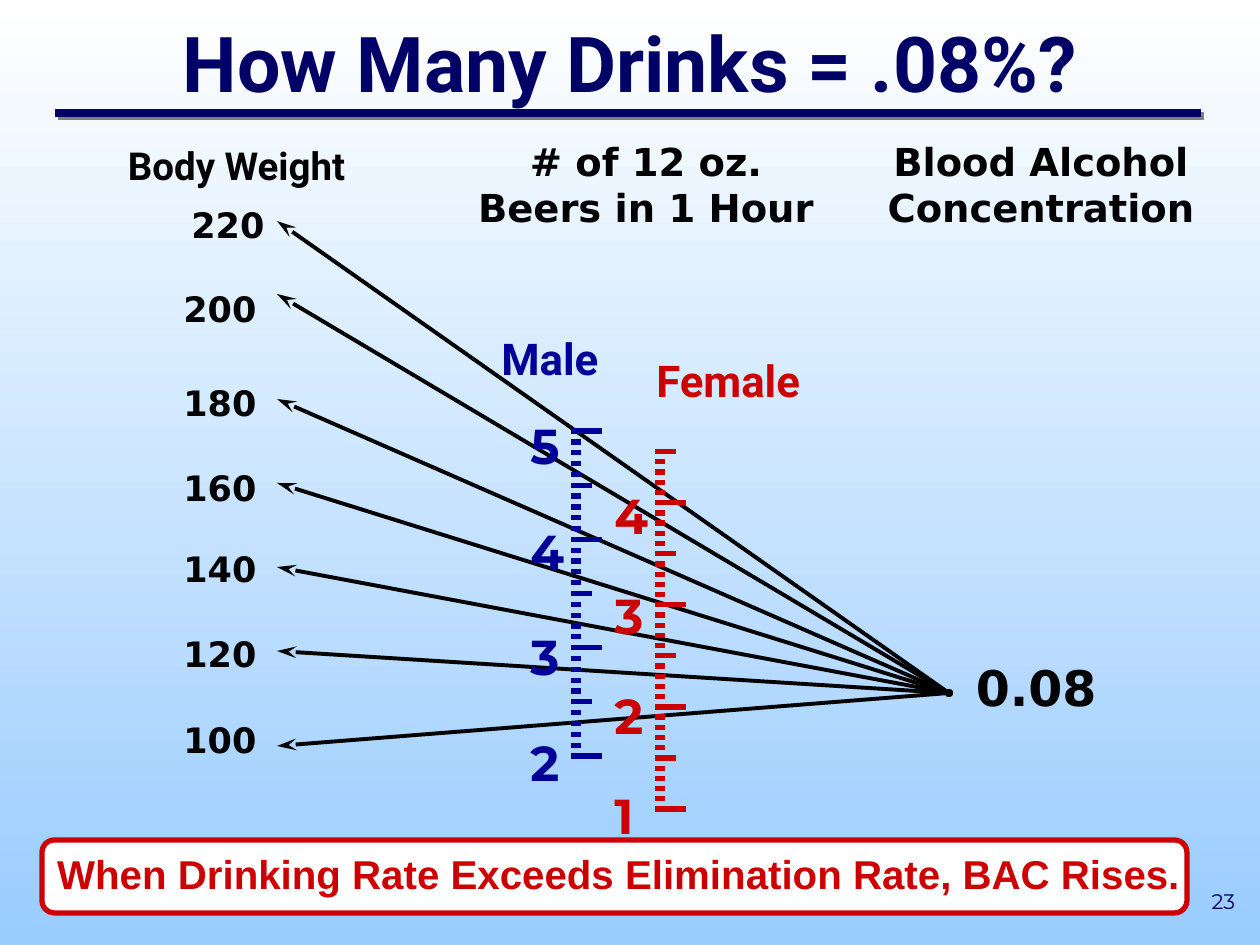
from pptx import Presentation
from pptx.dml.color import RGBColor
from pptx.enum.shapes import MSO_CONNECTOR as Link, MSO_SHAPE as Form
from pptx.enum.text import MSO_ANCHOR as Anchor, PP_ALIGN as Align
from pptx.oxml import parse_xml
from pptx.oxml.ns import nsdecls, qn
from pptx.util import Pt

SCALE = 914400 / 126
NAVY, BLUE, RED, BLACK, WHITE = "000066", "000099", "CC0000", "000000", "FFFFFF"
SANS = "DejaVu Sans"
SHADE = (
    '<a:outerShdw dist="35921" dir="2700000" algn="ctr" rotWithShape="0">'
    '<a:srgbClr val="808080"/></a:outerShdw>'
)


def px(num):
    return round(num * SCALE)


def tint(code):
    return RGBColor.from_string(code)


def effect(inner=""):
    return parse_xml(f'<a:effectLst {nsdecls("a")}>{inner}</a:effectLst>')


def place(shape, box):
    shape.left, shape.top, shape.width, shape.height = map(px, box)


def add_run(para, text, size, font, color, bold=True):
    run = para.add_run()
    run.text = text
    run.font.size = Pt(size)
    run.font.name = font
    run.font.bold = bold
    run.font.color.rgb = tint(color)
    return run


def add_text(slide, box, lines, size, font, color, align=Align.LEFT, gaps=None, bold=True):
    frame = slide.shapes.add_textbox(*map(px, box)).text_frame
    frame.word_wrap = True
    for i, text in enumerate(lines):
        para = frame.paragraphs[0] if i == 0 else frame.add_paragraph()
        para.alignment = align
        if gaps:
            para.line_spacing = gaps[i]
        add_run(para, text, size, font, color, bold)


def add_line(slide, start, end, color, width, shade=""):
    line = slide.shapes.add_connector(Link.STRAIGHT, *map(px, start + end))
    line.line.color.rgb = tint(color)
    line.line.width = Pt(width)
    line._element.spPr.append(effect(shade))
    return line


def add_ray(slide, start, end):
    edge = add_line(slide, start, end, BLACK, 2.25).line._get_or_add_ln()
    for tag, kind, wide, size in (
        ("headEnd", "stealth", "med", "lg"),
        ("tailEnd", "oval", "sm", "sm"),
    ):
        edge.append(parse_xml(
            f'<a:{tag} {nsdecls("a")} type="{kind}" w="{wide}" len="{size}"/>'))


def add_scale(slide, left, base, step, count, color):
    for i in range(count):
        size = 31 if i % 10 == 0 else 21 if i % 5 == 0 else 10
        y = base - i * step
        add_line(slide, (left, y), (left + size, y), color, 3)


def add_title(slide):
    title = slide.shapes.title
    place(title, (95, 10, 1071, 103))
    frame = title.text_frame
    frame.vertical_anchor = Anchor.MIDDLE
    para = frame.paragraphs[0]
    para.alignment = Align.CENTER
    run = add_run(para, "How Many Drinks = .08%?", 44, "Roboto", NAVY)
    run.font._element.find(qn("a:solidFill")).addnext(effect(SHADE))
    add_line(slide, (55, 113), (1201, 113), NAVY, 4.5, SHADE)


def add_banner(slide):
    panel = slide.shapes.add_shape(Form.ROUNDED_RECTANGLE, *map(px, (42, 840, 1145, 73)))
    panel.shadow.inherit = False
    panel.adjustments[0] = 0.17
    panel.fill.solid()
    panel.fill.fore_color.rgb = tint(WHITE)
    panel.line.color.rgb = tint(RED)
    panel.line.width = Pt(3)
    add_text(slide, (0, 843, 1239, 70),
             ["When Drinking Rate Exceeds Elimination Rate, BAC Rises."],
             23, "Arial", RED, Align.CENTER)


def paint(slide):
    fill = slide.background.fill
    fill.gradient()
    fill.gradient_angle = 270
    for stop, code, spot in zip(fill.gradient_stops, (WHITE, "99CCFF"), (0, 1)):
        stop.color.rgb = tint(code)
        stop.position = spot


def main():
    deck = Presentation()
    deck.slide_width, deck.slide_height = px(1260), px(945)
    slide = deck.slides.add_slide(deck.slide_layouts[5])
    paint(slide)
    add_title(slide)

    for box, text, font in (
        ((462, 132, 368, 105), "# of 12 oz. Beers in 1 Hour", SANS),
        ((864, 132, 354, 105), "Blood Alcohol Concentration", SANS),
        ((32, 136, 409, 59), "Body Weight", "Roboto"),
    ):
        add_text(slide, box, [text], 22, font, BLACK, Align.CENTER)

    for mass, left, top, tip in (
        (220, 179, 180, 221), (200, 171, 265, 294), (180, 171, 359, 399),
        (160, 171, 444, 483), (140, 171, 525, 567), (120, 171, 609, 651),
        (100, 171, 696, 746),
    ):
        add_ray(slide, (277, tip), (949, 693))
        add_text(slide, (left, top, 126, 72), [str(mass)], 20, SANS, BLACK, gaps=[1.4])
    add_text(slide, (945, 651, 164, 72), ["0.08"], 28, SANS, BLACK, Align.RIGHT)

    add_banner(slide)
    add_text(slide, (1187, 882, 73, 38), ["23"], 12, "Montserrat", NAVY,
             Align.CENTER, bold=False)

    add_text(slide, (518, 362, 53, 436), "5432", 28, "Montserrat", BLUE, gaps=[1.8] * 4)
    add_scale(slide, 571, 756, 10.83, 31, BLUE)
    add_text(slide, (489, 326, 130, 66), ["Male"], 25, "Roboto", BLUE)

    add_scale(slide, 655, 809, 10.21, 36, RED)
    add_text(slide, (602, 432, 53, 418), "4321", 28, "Montserrat", RED,
             gaps=[1.8] + [1.7] * 3)
    add_text(slide, (644, 348, 184, 66), ["Female"], 25, "Roboto", RED)
    deck.save("out.pptx")


if __name__ == "__main__":
    main()
